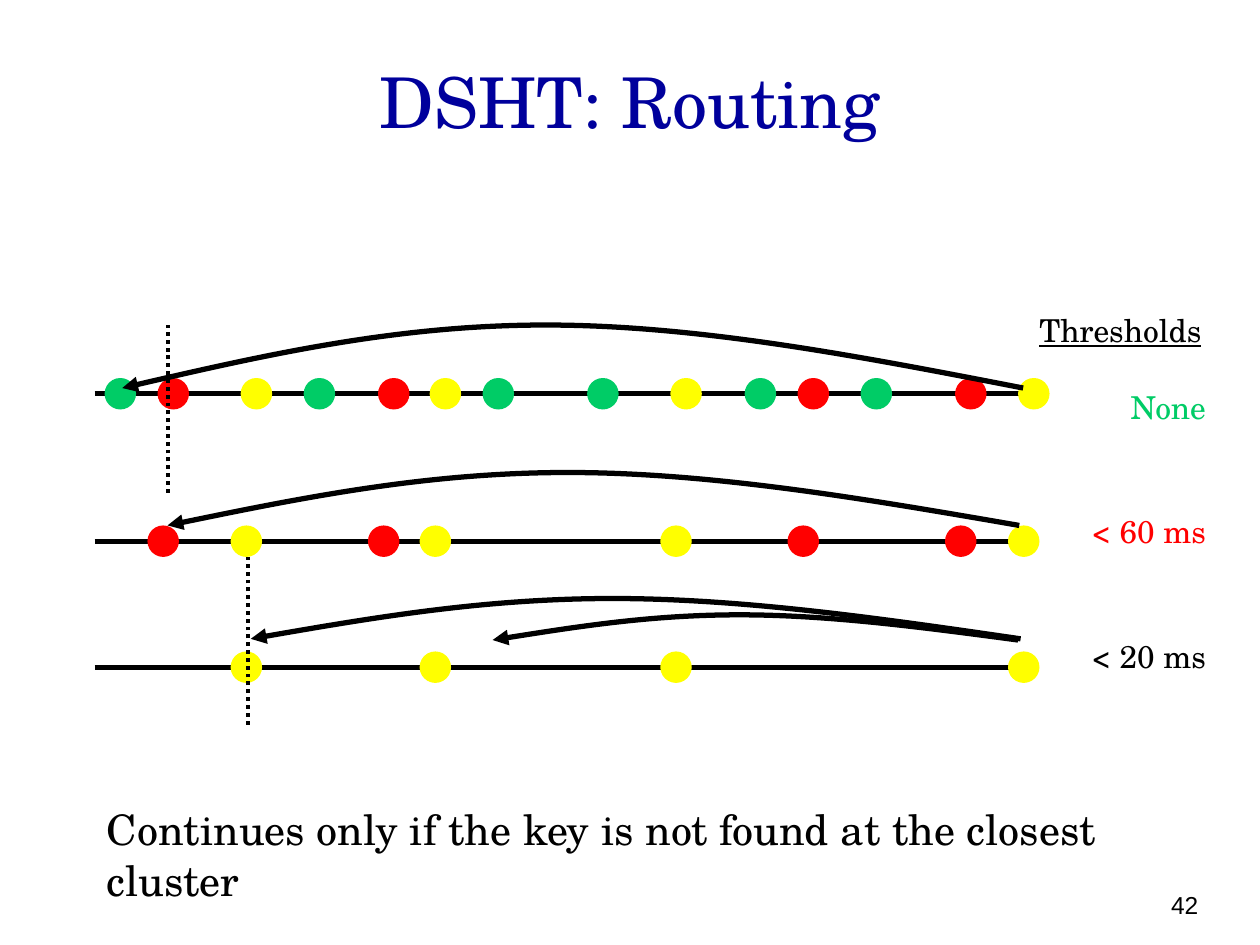
from lxml.etree import SubElement
from pptx import Presentation
from pptx.dml.color import RGBColor
from pptx.enum.dml import MSO_LINE
from pptx.enum.shapes import MSO_CONNECTOR, MSO_SHAPE
from pptx.enum.text import MSO_ANCHOR, PP_ALIGN
from pptx.oxml.ns import qn
from pptx.util import Inches, Pt

BLACK = RGBColor(0x00, 0x00, 0x00)
NAVY = RGBColor(0x00, 0x00, 0x9C)
YELLOW = RGBColor(0xFF, 0xFF, 0x00)
RED = RGBColor(0xFF, 0x00, 0x00)
GREEN = RGBColor(0x00, 0xCC, 0x66)

SERIF = "TeX Gyre Schola"
NODE_SIZE = 0.25
NODE_OFFSETS = {
    YELLOW: (1.08, 2.58, 4.49, 7.25),
    RED: (0.42, 2.17, 5.5, 6.75),
    GREEN: (0, 1.58, 3, 3.83, 5.08, 6),
}


def write_text(paragraph, text, size=18, color=BLACK, font=SERIF,
               align=PP_ALIGN.LEFT, underline=None):
    """Write one formatted run into a paragraph."""
    paragraph.alignment = align
    run = paragraph.add_run()
    run.text = text
    run.font.size = Pt(size)
    run.font.name = font
    run.font.color.rgb = color
    run.font.underline = underline


def add_text_frame(slide, left, top, width, height, wrap=True):
    """Add a text box and return its frame."""
    box = slide.shapes.add_textbox(Inches(left), Inches(top), Inches(width), Inches(height))
    box.text_frame.word_wrap = wrap
    return box.text_frame


def add_line(slide, start, end, weight=3, dash=None):
    """Add a straight black line between two points."""
    line = slide.shapes.add_connector(MSO_CONNECTOR.STRAIGHT, *map(Inches, start + end))
    line.line.color.rgb = BLACK
    line.line.width = Pt(weight)
    if dash:
        line.line.dash_style = dash
    SubElement(line._element.spPr, qn("a:effectLst"))


def add_hop(slide, left, top, width, height):
    """Draw a curved arrow from the box's lower right to its lower left corner."""
    right, bottom, middle = left + width, top + height, top + height / 2
    apex = right - 0.53 * width
    points = [
        (right + 0.34 * (apex - right), middle),
        (right + 0.68 * (apex - right), top),
        (apex, top),
        (apex + 0.35 * (left - apex), top),
        (apex + 0.68 * (left - apex), middle),
        (left, bottom),
    ]
    builder = slide.shapes.build_freeform(Inches(right), Inches(bottom))
    builder.add_line_segments([(Inches(x), Inches(y)) for x, y in points], close=False)
    hop = builder.convert_to_shape()
    hop.shadow.inherit = False
    hop.fill.background()
    hop.line.color.rgb = BLACK
    hop.line.width = Pt(3)
    SubElement(hop.line._get_or_add_ln(), qn("a:tailEnd"), type="triangle")
    outline = next(hop._element.iter(qn("a:path")))
    segments = outline.findall(qn("a:lnTo"))
    for first in range(0, len(segments), 3):
        curve = SubElement(outline, qn("a:cubicBezTo"))
        for segment in segments[first:first + 3]:
            curve.append(segment[0])
            outline.remove(segment)


def add_ring(slide, left, top, width, colors, shift=0):
    """Draw a key line with the nodes of the given colors on it."""
    middle = top + NODE_SIZE / 2
    add_line(slide, (left, middle), (left + width, middle))
    for color in colors:
        for offset in NODE_OFFSETS[color]:
            node = slide.shapes.add_shape(
                MSO_SHAPE.OVAL, Inches(left + shift + offset), Inches(top),
                Inches(NODE_SIZE), Inches(NODE_SIZE))
            node.shadow.inherit = False
            node.fill.solid()
            node.fill.fore_color.rgb = color
            node.line.fill.background()


def add_title(slide, left, top, width, height):
    """Place and format the slide title."""
    title = slide.shapes.title
    title.left, title.top, title.width, title.height = map(Inches, (left, top, width, height))
    title.text_frame.vertical_anchor = MSO_ANCHOR.MIDDLE
    write_text(title.text_frame.paragraphs[0], "DSHT: Routing", size=40, color=NAVY,
               align=PP_ALIGN.CENTER)


def add_thresholds(slide, left, top, width, height):
    """Write the threshold heading and one label for each ring."""
    heading = add_text_frame(slide, left, top, width, 0.5, wrap=False)
    write_text(heading.paragraphs[0], "Thresholds", underline=True)
    labels = add_text_frame(slide, left + 0.02, top + 0.58, 1.5, height - 0.58)
    rows = (("None", GREEN), ("< 60 ms", RED), ("< 20 ms", BLACK))
    for index, (text, color) in enumerate(rows):
        paragraph = labels.add_paragraph() if index else labels.paragraphs[0]
        paragraph.line_spacing = 1.1
        paragraph.space_before = Pt(47.4 if index else 0)
        write_text(paragraph, text, color=color, align=PP_ALIGN.RIGHT)


def add_routing(slide, left, top, width):
    """Draw the three rings, the routing hops and the key markers."""
    add_ring(slide, left, top + 2.59, width, (YELLOW,))
    add_ring(slide, left, top + 1.59, width, (YELLOW, RED))
    add_ring(slide, left, top + 0.42, width + 0.08, (YELLOW, RED, GREEN), shift=0.08)
    add_hop(slide, left + 0.22, top, 7.15, 0.5)
    add_hop(slide, left + 0.58, top + 1.17, 6.76, 0.42)
    for x, y in ((1.22, 1.84), (0.58, 0)):
        add_line(slide, (left + x, top + y + 1.33), (left + x, top + y),
                 weight=2.25, dash=MSO_LINE.ROUND_DOT)
    add_hop(slide, left + 3.16, top + 2.3, 4.17, 0.2)
    add_hop(slide, left + 1.24, top + 2.17, 6.11, 0.32)


def add_caption(slide, left, top, width, height):
    """Write the closing remark."""
    frame = add_text_frame(slide, left, top, width, height)
    write_text(frame.paragraphs[0],
               "Continues only if the key is not found at the closest cluster", size=24)


def add_page_number(slide, left, top, width, height):
    """Write the page number."""
    frame = add_text_frame(slide, left, top, width, height)
    frame.vertical_anchor = MSO_ANCHOR.BOTTOM
    write_text(frame.paragraphs[0], "42", size=14, font="Arial", align=PP_ALIGN.RIGHT)


def main():
    """Build and save the presentation."""
    presentation = Presentation()
    presentation.slide_width, presentation.slide_height = Inches(10), Inches(7.5)
    slide = presentation.slides.add_slide(presentation.slide_layouts.get_by_name("Title Only"))
    add_title(slide, 0.5, 0.32, 9, 0.95)
    add_thresholds(slide, 8.15, 2.42, 1.85, 3.01)
    add_routing(slide, 0.75, 2.58, 7.37)
    add_caption(slide, 0.75, 6.33, 8.83, 0.5)
    add_page_number(slide, 7.28, 6.83, 2.33, 0.52)
    presentation.save("out.pptx")


if __name__ == "__main__":
    main()
